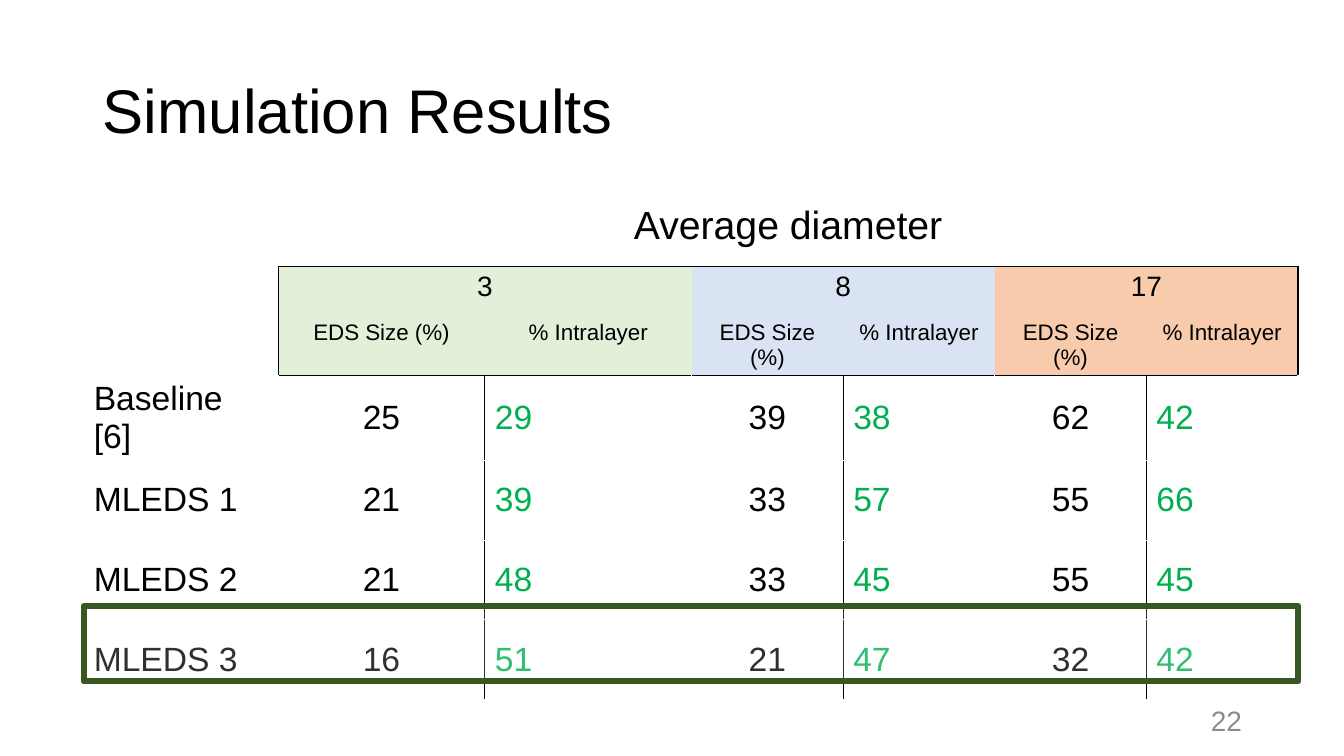
from lxml.etree import SubElement
from pptx import Presentation
from pptx.dml.color import RGBColor
from pptx.enum.shapes import MSO_SHAPE as Shape
from pptx.enum.text import MSO_ANCHOR as Anchor, PP_ALIGN as Align
from pptx.oxml.ns import qn
from pptx.util import Cm, Pt

BLACK, WHITE, GREEN = "000000", "FFFFFF", "00B050"
GROUPS = [("3", "E2F0D9"), ("8", "DAE3F3"), ("17", "F8CBAD")]
RESULTS = [
    ("Baseline [6]", 25, 29, 39, 38, 62, 42),
    ("MLEDS 1", 21, 39, 33, 57, 55, 66),
    ("MLEDS 2", 21, 48, 33, 45, 55, 45),
    ("MLEDS 3", 16, 51, 21, 47, 32, 42),
]
COL_WIDTHS = [4.9, 5.21, 5.21] + [3.82] * 4
ROW_HEIGHTS = [2.01, 1.24, 1.14] + [2.01] * 4


def rgb(color):
    """Turn a hex string into a colour."""
    return RGBColor.from_string(color)


def write(tf, text, size, color=BLACK, align=Align.LEFT, anchor=Anchor.MIDDLE):
    """Put one formatted paragraph into a text frame."""
    tf.text = text
    tf.word_wrap = True
    tf.vertical_anchor = anchor
    p = tf.paragraphs[0]
    p.alignment = align
    p.font.name, p.font.size = "Arial", Pt(size)
    p.font.color.rgb = rgb(color)
    return p


def edge_colors(row, col, last_col):
    """Return the left, right, top and bottom colours of a cell's border."""
    if row in (1, 2):
        if col == 0:
            return [None] * 4
        edges = [col == 1, last_col == 6, row == 1, row == 2]
        return [BLACK if edge else None for edge in edges]
    left, right, top, bottom = [WHITE] * 4
    if row == 0 and col > 0:
        bottom = BLACK
    if row > 2 and col > 0:
        left, right = (WHITE, BLACK) if col % 2 else (BLACK, WHITE)
        top = BLACK if row == 3 else WHITE
    return [left, right, top, bottom]


def paint_cell(cell, fill, edges):
    """Fill a cell and draw its four borders."""
    pr = cell._tc.get_or_add_tcPr()
    for side, color in zip("LRTB", edges):
        ln = SubElement(pr, qn(f"a:ln{side}"), w=str(Pt(1)))
        if color:
            solid = SubElement(ln, qn("a:solidFill"))
            SubElement(solid, qn("a:srgbClr"), val=color)
        else:
            SubElement(ln, qn("a:noFill"))
    cell.fill.solid()
    cell.fill.fore_color.rgb = rgb(fill)


def add_title(s, x, y, w, h):
    """Place the slide title."""
    sp = s.shapes.title
    sp.left, sp.top, sp.width, sp.height = Cm(x), Cm(y), Cm(w), Cm(h)
    write(sp.text_frame, "Simulation Results", 44).line_spacing = 0.9


def add_results(s, x, y, w, h):
    """Place the results table and the frame around its last row."""
    table = s.shapes.add_table(7, 7, Cm(x), Cm(y), Cm(w), Cm(h)).table
    table.first_row = table.horz_banding = False
    for column, width in zip(table.columns, COL_WIDTHS):
        column.width = Cm(width)
    for row, height in zip(table.rows, ROW_HEIGHTS):
        row.height = Cm(height)

    table.cell(0, 1).merge(table.cell(0, 6))
    write(table.cell(0, 1).text_frame, "Average diameter", 28, align=Align.CENTER)
    table.cell(0, 1).vertical_anchor = Anchor.MIDDLE
    for i, (diameter, _) in enumerate(GROUPS):
        col = 1 + 2 * i
        table.cell(1, col).merge(table.cell(1, col + 1))
        write(table.cell(1, col).text_frame, diameter, 20, align=Align.CENTER, anchor=Anchor.TOP)
        for j, label in enumerate(("EDS Size (%)", "% Intralayer")):
            write(table.cell(2, col + j).text_frame, label, 16, align=Align.CENTER, anchor=Anchor.TOP)

    for r, values in enumerate(RESULTS, 3):
        for c, value in enumerate(values):
            cell = table.cell(r, c)
            color = GREEN if c and c % 2 == 0 else BLACK
            align = Align.CENTER if c % 2 else Align.LEFT
            write(cell.text_frame, str(value), 24, color, align)
            cell.vertical_anchor = Anchor.MIDDLE

    for r in range(7):
        for c in range(7):
            cell = table.cell(r, c)
            fill = GROUPS[(c - 1) // 2][1] if r in (1, 2) and c else WHITE
            paint_cell(cell, fill, edge_colors(r, c, c + cell.span_width - 1))

    frame_h = 1.9
    add_frame(s, x, y + h - frame_h, w, frame_h)


def add_frame(s, x, y, w, h):
    """Place a translucent highlight frame."""
    sp = s.shapes.add_shape(Shape.RECTANGLE, Cm(x), Cm(y), Cm(w), Cm(h))
    sp.shadow.inherit = False
    sp.fill.solid()
    sp.fill.fore_color.rgb = rgb(WHITE)
    color = sp._element.spPr.find(qn("a:solidFill")).find(qn("a:srgbClr"))
    SubElement(color, qn("a:alpha"), val="19000")
    sp.line.color.rgb = rgb("385723")
    sp.line.width = Pt(4.5)


def add_page_number(s, x, y, w, h):
    """Place the page number."""
    sp = s.shapes.add_textbox(Cm(x), Cm(y), Cm(w), Cm(h))
    write(sp.text_frame, "22", 20, "8C8C8C", Align.RIGHT)


def main():
    """Build and save the slide."""
    prs = Presentation()
    prs.slide_width, prs.slide_height = Cm(33.87), Cm(19.05)
    s = prs.slides.add_slide(prs.slide_layouts[5])
    add_title(s, 2.34, 1.02, 29.21, 3.68)
    add_results(s, 2.11, 4.7, 30.61, 12.47)
    add_page_number(s, 23.93, 17.65, 7.62, 1.02)
    prs.save("out.pptx")


if __name__ == "__main__":
    main()
